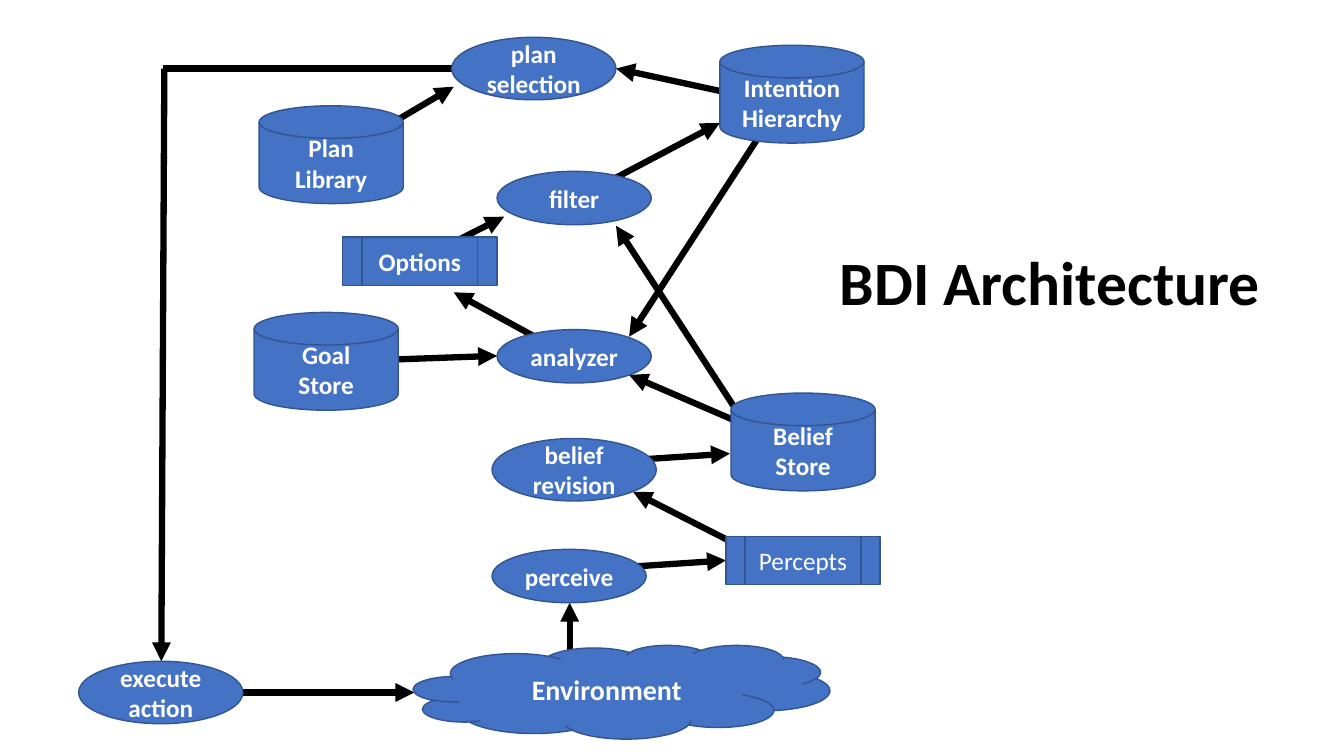
from dataclasses import dataclass

from lxml import etree
from pptx import Presentation
from pptx.dml.color import RGBColor
from pptx.enum import shapes, text
from pptx.oxml.ns import qn
from pptx.util import Inches, Pt


@dataclass(frozen=True)
class Theme:
    font: str = "Calibri"
    fill: RGBColor = RGBColor(0x44, 0x72, 0xC4)
    outline: RGBColor = RGBColor(0x32, 0x54, 0x91)
    light: RGBColor = RGBColor(0xFF, 0xFF, 0xFF)
    dark: RGBColor = RGBColor(0, 0, 0)
    title: Pt = Pt(44)
    large: Pt = Pt(20)
    label: Pt = Pt(18)
    arrow: Pt = Pt(4.5)
    edge: Pt = Pt(1)


THEME = Theme()


def style_text(frame, size, color, align, bold=True):
    for para in frame.paragraphs:
        para.alignment = align
        for span in para.runs:
            span.font.name = THEME.font
            span.font.size = size
            span.font.bold = bold
            span.font.color.rgb = color


def add_flow(page, start, end, arrowhead=True):
    """Draw a thick straight line, with an arrowhead at its end if wanted."""
    line = page.shapes.add_connector(
        shapes.MSO_CONNECTOR.STRAIGHT, *(Inches(v) for v in (*start, *end)))
    line.line.color.rgb = THEME.dark
    line.line.width = THEME.arrow
    if arrowhead:
        etree.SubElement(line.line._get_or_add_ln(), qn("a:tailEnd"), type="triangle")
    etree.SubElement(line._element.spPr, qn("a:effectLst"))
    return line


deck = Presentation()
deck.slide_width, deck.slide_height = Inches(13.33), Inches(7.5)
page = deck.slides.add_slide(deck.slide_layouts[5])

title = page.shapes.title
title.left, title.top = Inches(8.23), Inches(2.37)
title.width, title.height = Inches(4.41), Inches(0.84)
title.text_frame.text = "BDI Architecture"
title.text_frame.word_wrap = False
title.text_frame.vertical_anchor = text.MSO_ANCHOR.TOP
style_text(title.text_frame, THEME.title, THEME.dark, text.PP_ALIGN.LEFT)

# Flows lie behind the boxes, so they are drawn first
FLOWS = [
    ((1.8, 6.87), (4.11, 6.87)),   # execute action to Environment
    ((7.66, 1.15), (6.24, 3.34)),  # Intention Hierarchy to analyzer
    ((3.4, 1.51), (4.5, 0.86)),    # Plan Library to plan selection
    ((7.5, 0.98), (6.11, 0.68)),   # Intention Hierarchy to plan selection
    ((5.83, 1.91), (7.14, 1.22)),  # filter to Intention Hierarchy
    ((4.25, 2.53), (5, 2.15)),     # Options to filter
    ((5.65, 3.53), (4.5, 2.9)),    # analyzer to Options
    ((7.44, 4.28), (6.11, 2.24)),  # Belief Store to filter
    ((3.52, 3.58), (4.93, 3.53)),  # Goal Store to analyzer
    ((7.7, 4.35), (6.24, 3.72)),   # Belief Store to analyzer
    ((5.87, 4.59), (7.24, 4.5)),   # belief revision to Belief Store
    ((7.4, 5.45), (6.28, 4.88)),   # Percepts to belief revision
    ((5.65, 6.65), (5.65, 5.98)),  # Environment to perceive
    ((1.63, 0.68), (1.6, 6.56)),   # plan selection down to execute action
]
for start, end in FLOWS:
    add_flow(page, start, end)
add_flow(page, (4.48, 0.68), (1.62, 0.68), arrowhead=False)
perceive_to_percepts = add_flow(page, (5.83, 5.65), (7.2, 5.56))

# Each kind of box: preset shape, width, height
SHAPE = shapes.MSO_SHAPE
KINDS = {
    "world": (SHAPE.CLOUD, 4.13, 0.93),
    "process": (SHAPE.OVAL, 1.53, 0.53),
    "tall process": (SHAPE.OVAL, 1.63, 0.62),
    "store": (SHAPE.FLOWCHART_MAGNETIC_DISK, 1.43, 0.97),
    "data": (SHAPE.FLOWCHART_PREDEFINED_PROCESS, 1.53, 0.48),
}
BOXES = [
    ("Environment", "world", 4.1, 6.4),
    ("perceive", "process", 4.88, 5.45),
    ("Percepts", "data", 7.2, 5.32),
    ("belief\nrevision", "tall process", 4.88, 4.35),
    ("Belief\nStore", "store", 7.25, 3.9),
    ("analyzer", "process", 4.93, 3.27),
    ("Goal\nStore", "store", 2.52, 3.1),
    ("Options", "data", 3.4, 2.35),
    ("filter", "process", 4.93, 1.7),
    ("Intention\nHierarchy", "store", 7.14, 0.45),
    ("plan\nselection", "tall process", 4.48, 0.37),
    ("Plan\nLibrary", "store", 2.57, 1.05),
    ("execute\naction", "tall process", 0.78, 6.56),
]
boxes = {}
for label, kind, left, top in BOXES:
    preset, width, height = KINDS[kind]
    box = page.shapes.add_shape(preset, *(Inches(v) for v in (left, top, width, height)))
    box.shadow.inherit = False
    box.fill.solid()
    box.fill.fore_color.rgb = THEME.fill
    box.line.color.rgb = THEME.outline
    box.line.width = THEME.edge
    box.text_frame.text = label
    box.text_frame.vertical_anchor = text.MSO_ANCHOR.MIDDLE
    size = THEME.large if kind == "world" else THEME.label
    style_text(box.text_frame, size, THEME.light, text.PP_ALIGN.CENTER,
               bold=label != "Percepts")
    boxes[label] = box

perceive_to_percepts.end_connect(boxes["Percepts"], 1)

deck.save("out.pptx")
